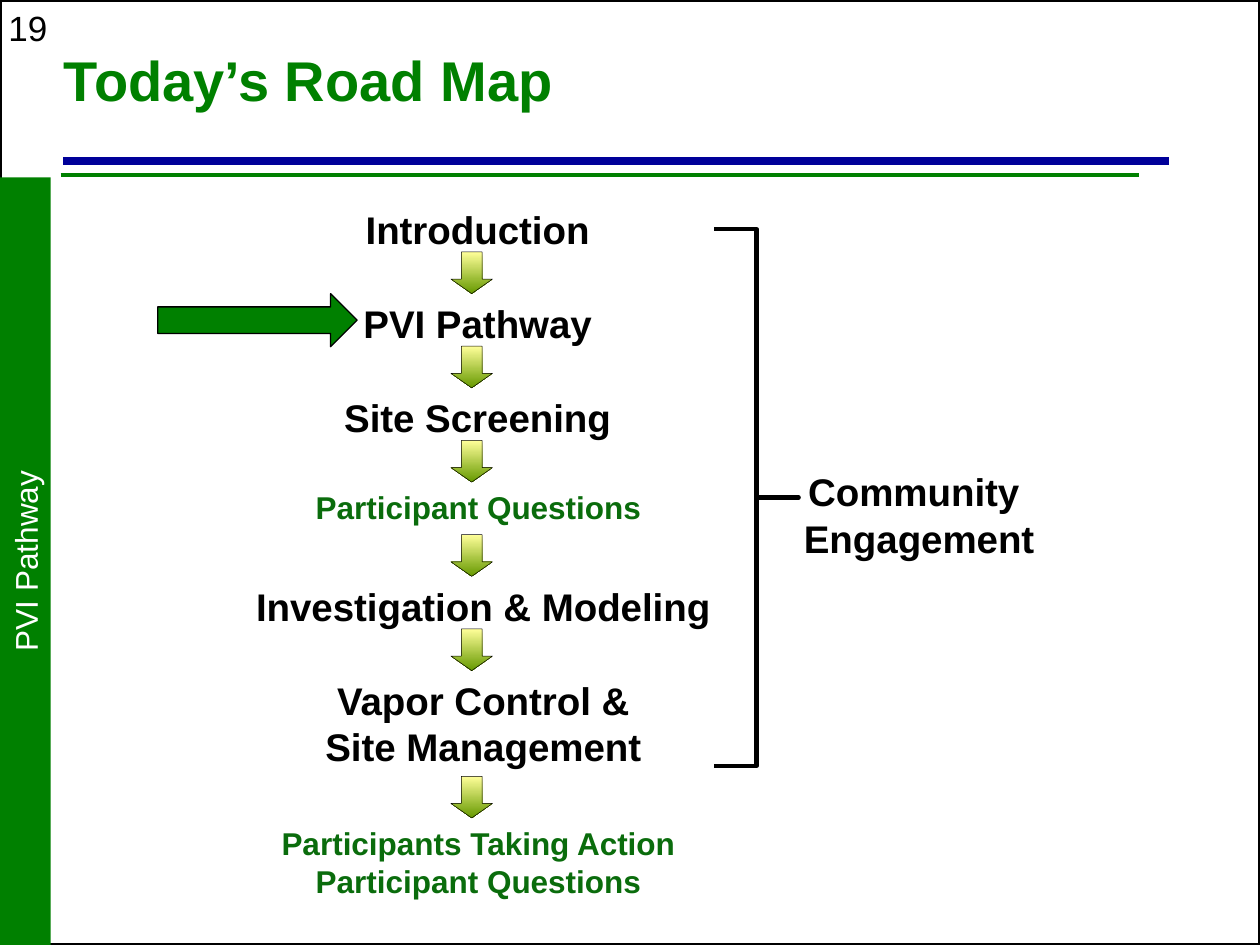
from dataclasses import dataclass

from lxml import etree
from pptx import Presentation
from pptx.dml.color import RGBColor
from pptx.enum.shapes import MSO_CONNECTOR, MSO_SHAPE
from pptx.enum.text import MSO_ANCHOR, PP_ALIGN
from pptx.oxml.ns import qn
from pptx.shapes.autoshape import Shape
from pptx.slide import Slide
from pptx.util import Cm, Pt

STRAIGHT = MSO_CONNECTOR.STRAIGHT
RECTANGLE = MSO_SHAPE.RECTANGLE
DOWN_ARROW = MSO_SHAPE.DOWN_ARROW
RIGHT_ARROW = MSO_SHAPE.RIGHT_ARROW
RIGHT_BRACE = MSO_SHAPE.RIGHT_BRACE
LEFT = PP_ALIGN.LEFT
CENTER = PP_ALIGN.CENTER
TOP = MSO_ANCHOR.TOP
MIDDLE = MSO_ANCHOR.MIDDLE

FONT = "Arial"
BLACK = RGBColor(0x00, 0x00, 0x00)
WHITE = RGBColor(0xFF, 0xFF, 0xFF)
NAVY = RGBColor(0x00, 0x00, 0x99)
GREEN = RGBColor(0x00, 0x80, 0x00)
DARK_GREEN = RGBColor(0x0A, 0x6C, 0x0C)
PALE_YELLOW = RGBColor(0xFF, 0xFF, 0x99)
OLIVE = RGBColor(0x66, 0x99, 0x00)

FIRST_STEP_TOP = 4.02
ARROW_LEFT = 9.09
ARROW_SIZE = 0.84


@dataclass(frozen=True)
class Area:
    left: float
    top: float
    width: float
    height: float

    def lengths(self) -> tuple[Cm, Cm, Cm, Cm]:
        return Cm(self.left), Cm(self.top), Cm(self.width), Cm(self.height)


@dataclass(frozen=True)
class Rule:
    left: float
    right: float
    y: float
    color: RGBColor
    weight: float


@dataclass(frozen=True)
class Step:
    text: str
    left: float = 4.65
    width: float = 9.96
    height: float = 1.06
    size: float = 22
    color: RGBColor = BLACK
    arrow: bool = True


RULES = (
    Rule(1.27, 23.57, 3.25, NAVY, 4.5),
    Rule(1.22, 22.96, 3.53, GREEN, 2),
)
STEPS = (
    Step("Introduction"),
    Step("PVI Pathway"),
    Step("Site Screening"),
    Step("Participant Questions", 4.88, 9.53, size=18, color=DARK_GREEN),
    Step("Investigation & Modeling", 4.88, 9.73),
    Step("Vapor Control &\vSite Management", 4.88, 9.73, 2.13),
    Step("Participants Taking Action\nParticipant Questions", 4.88, 9.53, 1.8, 18, DARK_GREEN, False),
)


def write(shape: Shape, text: str, *, size: float, color: RGBColor = BLACK, bold: bool = False,
          align: PP_ALIGN = CENTER, anchor: MSO_ANCHOR = TOP, wrap: bool = True,
          spacing: float = 1.0) -> None:
    """Fill a shape with formatted text, one paragraph per line."""
    frame = shape.text_frame
    frame.text = text
    frame.word_wrap = wrap
    frame.vertical_anchor = anchor
    for para in frame.paragraphs:
        para.alignment = align
        para.line_spacing = spacing
        for span in para.runs:
            span.font.name = FONT
            span.font.size = Pt(size)
            span.font.bold = bold
            span.font.color.rgb = color


def add_text(page: Slide, area: Area, text: str, **style) -> None:
    """Add a text box."""
    write(page.shapes.add_textbox(*area.lengths()), text, **style)


def add_figure(page: Slide, kind: MSO_SHAPE, area: Area, *, fill: RGBColor | None = None,
               weight: float = 0) -> Shape:
    """Add a preset shape with an optional fill and black outline."""
    figure = page.shapes.add_shape(kind, *area.lengths())
    figure.shadow.inherit = False
    if fill is None:
        figure.fill.background()
    else:
        figure.fill.solid()
        figure.fill.fore_color.rgb = fill
    if weight:
        figure.line.color.rgb = BLACK
        figure.line.width = Pt(weight)
    else:
        figure.line.fill.background()
    return figure


def add_rule(page: Slide, rule: Rule) -> None:
    """Add a horizontal line under the title."""
    line = page.shapes.add_connector(STRAIGHT, Cm(rule.left), Cm(rule.y), Cm(rule.right), Cm(rule.y))
    line.line.color.rgb = rule.color
    line.line.width = Pt(rule.weight)
    etree.SubElement(line._element.spPr, qn("a:effectLst"))


def add_step_arrow(page: Slide, top: float) -> None:
    """Add a gradient arrow that leads to the next step."""
    arrow = add_figure(page, DOWN_ARROW, Area(ARROW_LEFT, top, ARROW_SIZE, ARROW_SIZE), weight=0.25)
    arrow.adjustments[1] = 0.35
    arrow.fill.gradient()
    arrow.fill.gradient_angle = 270
    for stop, color, position in zip(arrow.fill.gradient_stops, (PALE_YELLOW, OLIVE), (0, 1)):
        stop.color.rgb = color
        stop.position = position


def add_steps(page: Slide) -> None:
    """Stack the steps of the road map with arrows between them."""
    top = FIRST_STEP_TOP
    for step in STEPS:
        add_text(page, Area(step.left, top, step.width, step.height), step.text,
                 size=step.size, color=step.color, bold=True)
        top += step.height
        if step.arrow:
            add_step_arrow(page, top)
            top += ARROW_SIZE


def main() -> None:
    """Build the road map slide."""
    deck = Presentation()
    deck.slide_width, deck.slide_height = Cm(25.4), Cm(19.05)
    page = deck.slides.add_slide(deck.slide_layouts[6])

    for rule in RULES:
        add_rule(page, rule)
    add_text(page, Area(-0.08, 0, 1.37, 1.09), "19", size=20, align=LEFT, wrap=False)
    add_figure(page, RECTANGLE, Area(0, 0, 25.4, 19.05), weight=2)
    add_text(page, Area(1.04, 0.25, 21.08, 2.92), "Today’s Road Map", size=32, color=GREEN,
             bold=True, align=LEFT, anchor=MIDDLE, spacing=0.85)

    add_steps(page)
    brace = add_figure(page, RIGHT_BRACE, Area(14.4, 4.62, 1.7, 10.82), weight=2.5)
    brace.adjustments[0] = 0
    add_text(page, Area(15.67, 9.32, 5.72, 2.13), "Community \nEngagement", size=22, bold=True)
    add_figure(page, RIGHT_ARROW, Area(3.18, 5.92, 4.02, 1.07), fill=GREEN, weight=0.75)

    sidebar = add_figure(page, RECTANGLE, Area(-7.22, 10.8, 15.47, 1.02), fill=GREEN)
    sidebar.rotation = 270
    write(sidebar, "PVI Pathway", size=18, color=WHITE)

    deck.save("out.pptx")


if __name__ == "__main__":
    main()
